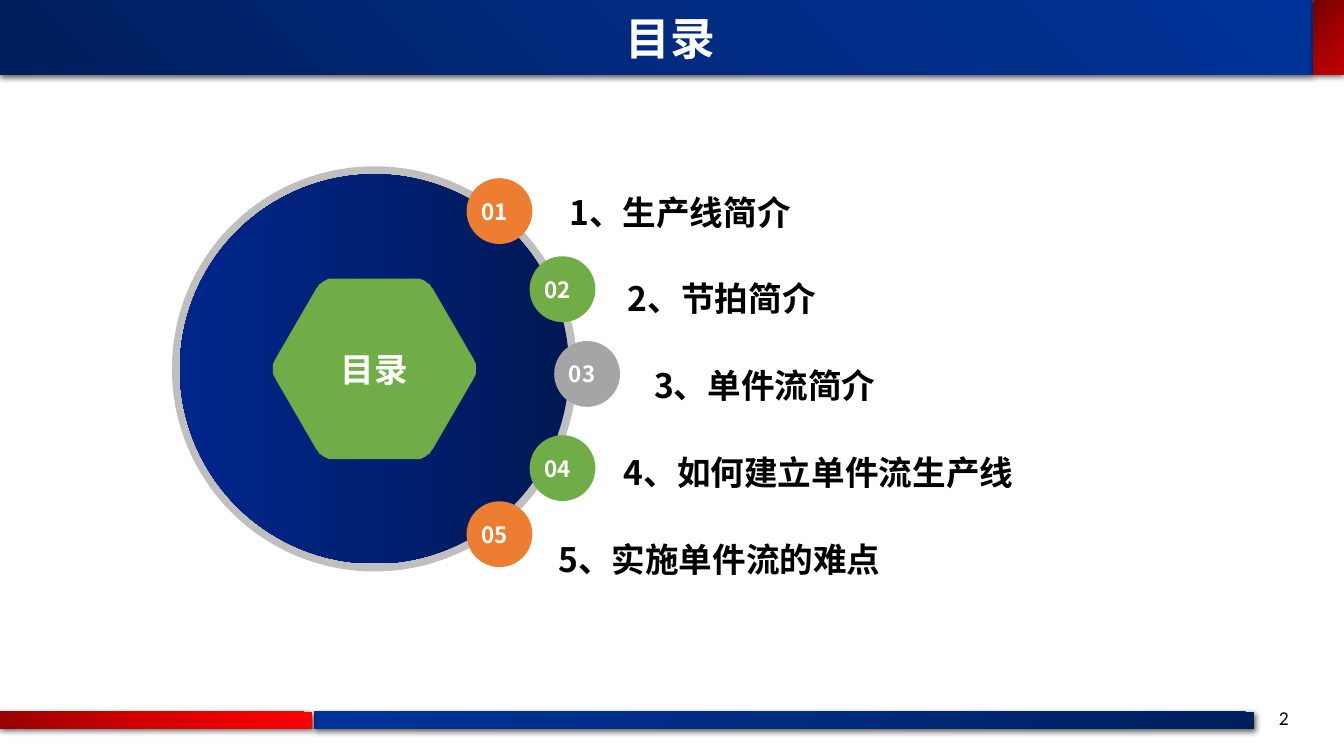
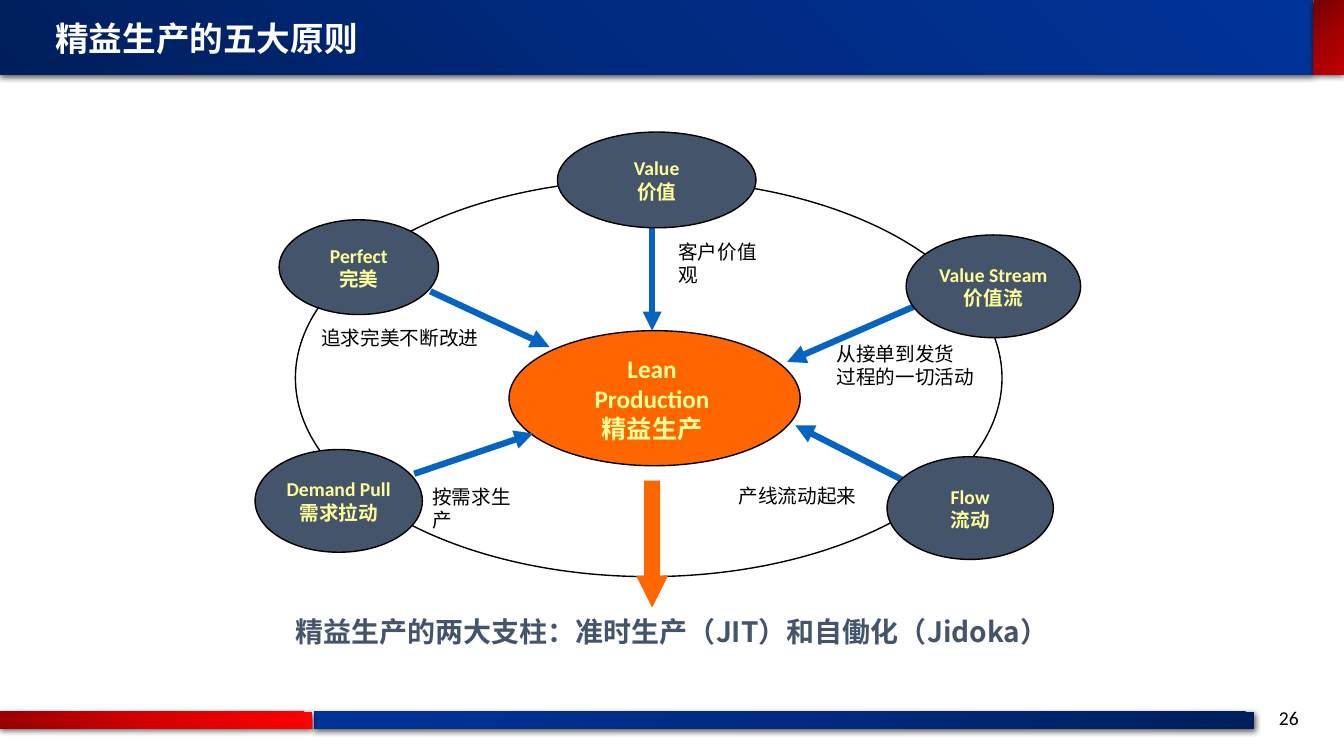
from math import cos, pi, sin

from lxml.etree import SubElement
from pptx import Presentation
from pptx.dml.color import RGBColor
from pptx.enum.shapes import MSO_CONNECTOR, MSO_SHAPE
from pptx.enum.text import MSO_ANCHOR, PP_ALIGN
from pptx.oxml.ns import qn
from pptx.util import Pt

BLACK = RGBColor(0x00, 0x00, 0x00)
WHITE = RGBColor(0xFF, 0xFF, 0xFF)
SILVER = RGBColor(0xBF, 0xBF, 0xBF)
GRAY = RGBColor(0xA5, 0xA5, 0xA5)
GREEN = RGBColor(0x70, 0xAD, 0x47)
ORANGE = RGBColor(0xED, 0x7D, 0x31)
VIVID_ORANGE = RGBColor(0xFF, 0x66, 0x00)
SLATE = RGBColor(0x44, 0x54, 0x6A)
ARROW_BLUE = RGBColor(0x05, 0x63, 0xC1)
PALE_YELLOW = RGBColor(0xFF, 0xFF, 0x99)

NAVY_STOPS = [RGBColor(0x00, 0x1E, 0x5B), RGBColor(0x00, 0x2B, 0x81), RGBColor(0x00, 0x33, 0x99)]
DISC_STOPS = [RGBColor(0x00, 0x17, 0x52), RGBColor(0x00, 0x20, 0x74), RGBColor(0x00, 0x26, 0x8A)]
RED_STOPS = [RGBColor(0x97, 0x00, 0x00), RGBColor(0xD7, 0x00, 0x00), RGBColor(0xFF, 0x00, 0x00)]
DARK_RED_STOPS = [RGBColor(0x72, 0x00, 0x00), RGBColor(0xA2, 0x00, 0x00), RGBColor(0xC0, 0x00, 0x00)]

CJK = "Noto Sans CJK SC"
LATIN = "Calibri"


def write_text(tf, text, size, color, font=CJK, bold=False, align=PP_ALIGN.LEFT, spacing=None):
    tf.text = text
    for p in tf.paragraphs:
        p.alignment = align
        if spacing:
            p.line_spacing = spacing
        for r in p.runs:
            r.font.size = Pt(size)
            r.font.bold = bold
            r.font.color.rgb = color
            r.font.name = font
            SubElement(r.font._element, qn("a:ea"), typeface=CJK)


def add_text(slide, box, text, size, color, wrap=False, **style):
    tf = slide.shapes.add_textbox(*map(Pt, box)).text_frame
    tf.word_wrap = wrap
    write_text(tf, text, size, color, **style)


def style_shape(sp, fill=None, line=None):
    sp.shadow.inherit = False
    if fill is None:
        sp.fill.background()
    else:
        sp.fill.solid()
        sp.fill.fore_color.rgb = fill
    if line is None:
        sp.line.fill.background()
    else:
        sp.line.color.rgb = line
        sp.line.width = Pt(1)


def add_shape(slide, kind, box, fill=None, line=None):
    sp = slide.shapes.add_shape(kind, *map(Pt, box))
    style_shape(sp, fill, line)
    return sp


def label_shape(sp, text, size, color, right=0, **style):
    tf = sp.text_frame
    tf.margin_left = tf.margin_top = tf.margin_bottom = 0
    tf.margin_right = Pt(right)
    tf.vertical_anchor = MSO_ANCHOR.MIDDLE
    tf.word_wrap = False
    write_text(tf, text, size, color, bold=True, align=PP_ALIGN.CENTER, **style)


def set_gradient(sp, stops, angle=None):
    spPr = sp._element.spPr
    grad = SubElement(spPr, qn("a:gradFill"), rotWithShape="1")
    spPr.replace(spPr.find(qn("a:noFill")), grad)
    gsLst = SubElement(grad, qn("a:gsLst"))
    for i, color in enumerate(stops):
        gs = SubElement(gsLst, qn("a:gs"), pos=str(i * 50000))
        SubElement(gs, qn("a:srgbClr"), val=str(color))
    if angle is None:
        radial = SubElement(grad, qn("a:path"), {"path": "circle"})
        SubElement(radial, qn("a:fillToRect"), t="100000", r="100000")
    else:
        SubElement(grad, qn("a:lin"), ang=str(angle * 60000), scaled="0")


def add_band(slide, box, stops, angle=None):
    sp = add_shape(slide, MSO_SHAPE.RECTANGLE, box)
    set_gradient(sp, stops, angle)
    effects = sp._element.spPr.find(qn("a:effectLst"))
    shadow = SubElement(effects, qn("a:outerShdw"), blurRad=str(Pt(4.5)), dist=str(Pt(1.5)),
                        dir="5400000", algn="t", rotWithShape="0")
    clr = SubElement(shadow, qn("a:srgbClr"), val="000000")
    SubElement(clr, qn("a:alpha"), val="63000")


def add_frame(slide, number):
    add_text(slide, (906.5, 501, 31.7, 24.5), number, 14, BLACK, font=LATIN)
    add_band(slide, (224.6, 508.3, 671, 12.2), NAVY_STOPS, 225)
    add_band(slide, (0, 508.3, 223.2, 12.2), RED_STOPS)
    add_band(slide, (0, 0, 938.2, 53.3), NAVY_STOPS)
    add_band(slide, (938.2, 0, 21.8, 53.3), DARK_RED_STOPS, 45)


def add_title(slide, box, text, size, align=PP_ALIGN.LEFT):
    add_text(slide, box, text, size, WHITE, wrap=True, bold=True, align=align)


def add_circle(slide, x, y, diameter, fill=None):
    box = (x - diameter / 2, y - diameter / 2, diameter, diameter)
    return add_shape(slide, MSO_SHAPE.OVAL, box, fill)


def add_round_hexagon(slide, x, y, radius, cut, fill):
    corners = [(x + radius * cos(i * pi / 3), y + radius * sin(i * pi / 3)) for i in range(6)]
    points = []
    for i, (cx, cy) in enumerate(corners):
        (ax, ay), (bx, by) = [(cx + (nx - cx) * cut / radius, cy + (ny - cy) * cut / radius)
                              for nx, ny in (corners[i - 1], corners[(i + 1) % 6])]
        for step in range(9):
            t = step / 8
            u = 1 - t
            points.append((u * u * ax + 2 * u * t * cx + t * t * bx,
                           u * u * ay + 2 * u * t * cy + t * t * by))
    builder = slide.shapes.build_freeform(*points[0], scale=Pt(1))
    builder.add_line_segments(points[1:], close=True)
    sp = builder.convert_to_shape()
    style_shape(sp, fill)
    return sp


def add_arrow(slide, x1, y1, x2, y2):
    cxn = slide.shapes.add_connector(MSO_CONNECTOR.STRAIGHT, Pt(x1), Pt(y1), Pt(x2), Pt(y2))
    cxn.line.color.rgb = ARROW_BLUE
    cxn.line.width = Pt(4.5)
    SubElement(cxn.line._get_or_add_ln(), qn("a:tailEnd"), type="triangle")
    SubElement(cxn._element.spPr, qn("a:effectLst"))


def build_contents(slide):
    add_frame(slide, "2")
    add_title(slide, (351.4, 4.3, 254.9, 46), "目录", 32, PP_ALIGN.CENTER)
    cx, cy = 267.5, 263.5
    add_circle(slide, cx, cy, 289.4, SILVER)
    set_gradient(add_circle(slide, cx, cy, 278), DISC_STOPS, 180)
    hexagon = add_round_hexagon(slide, cx, cy, 74.8, 8.8, GREEN)
    label_shape(hexagon, "目录", 24, WHITE)
    topics = [
        (356.8, 150.8, ORANGE, 399.6, 208, "生产线简介"),
        (401.8, 206.6, GREEN, 441.4, 179, "节拍简介"),
        (419.4, 267.1, GRAY, 460.1, 208, "单件流简介"),
        (401.8, 334.4, GREEN, 438.5, 352, "如何建立单件流生产线"),
        (356.8, 381.6, ORANGE, 391.7, 294, "实施单件流的难点"),
    ]
    for i, (x, y, color, left, width, topic) in enumerate(topics):
        badge = add_circle(slide, x, y, 47, color)
        label_shape(badge, f"{i + 1:02}", 16, WHITE, right=7.2)
        add_text(slide, (left, 118.8 + 62.1 * i, width, 54.7), f"{i + 1}、{topic}", 24, BLACK,
                 bold=True, spacing=1.5)


def build_principles(slide):
    add_frame(slide, "26")
    add_title(slide, (32.4, 9.4, 425.5, 36), "精益生产的五大原则", 24)
    core = add_shape(slide, MSO_SHAPE.OVAL, (363.6, 236.2, 208, 96.5), VIVID_ORANGE, BLACK)
    label_shape(core, "Lean\nProduction\n精益生产", 18, PALE_YELLOW, right=3.6, font=LATIN)
    for ends in [
        (465.8, 162.7, 465.8, 236.2),
        (653, 218.9, 562.3, 258.5),
        (647.3, 344.2, 568.1, 303.8),
        (295.9, 338.4, 380.9, 309.6),
        (307.4, 208.1, 392.4, 247.7),
    ]:
        add_arrow(slide, *ends)
    add_shape(slide, MSO_SHAPE.OVAL, (211, 128.2, 504.7, 283.7), line=BLACK)
    principles = [
        ((398.2, 94.3, 141.8, 68.4), "Value\n价值", (477.4, 167.8, 84.2, 23.8), "客户价值观"),
        ((647.3, 167.8, 124.6, 73.4), "Value Stream\n价值流",
         (590.4, 240.5, 113.8, 41), "从接单到发货\n过程的一切活动"),
        ((633.6, 326.2, 118.8, 73.4), "Flow\n流动", (520.6, 342, 98.6, 23.8), "产线流动起来"),
        ((182.2, 321.1, 119.5, 73.4), "Demand Pull\n需求拉动",
         (301.7, 342.7, 84.2, 23.8), "按需求生产"),
        ((199.4, 157, 113.8, 67.7), "Perfect\n完美", (222.5, 229, 126.7, 23.8), "追求完美不断改进"),
    ]
    for oval, name, box, note in principles:
        sp = add_shape(slide, MSO_SHAPE.OVAL, oval, SLATE, BLACK)
        label_shape(sp, name, 14, PALE_YELLOW, font=LATIN)
        add_text(slide, box, note, 14, BLACK, font=LATIN)
    arrow = add_shape(slide, MSO_SHAPE.DOWN_ARROW, (454.3, 343.4, 23, 90.7), VIVID_ORANGE)
    arrow.adjustments[0] = 0.5
    arrow.adjustments[1] = 1
    add_text(slide, (148.3, 439.9, 663.1, 27.4),
             "精益生产的两大支柱：准时生产（JIT）和自働化（Jidoka）", 20, SLATE,
             wrap=True, bold=True, align=PP_ALIGN.CENTER, spacing=0.8)


def main():
    prs = Presentation()
    prs.slide_width = Pt(960)
    prs.slide_height = Pt(540)
    for build in (build_contents, build_principles):
        build(prs.slides.add_slide(prs.slide_layouts[6]))
    prs.save("out.pptx")


if __name__ == "__main__":
    main()
